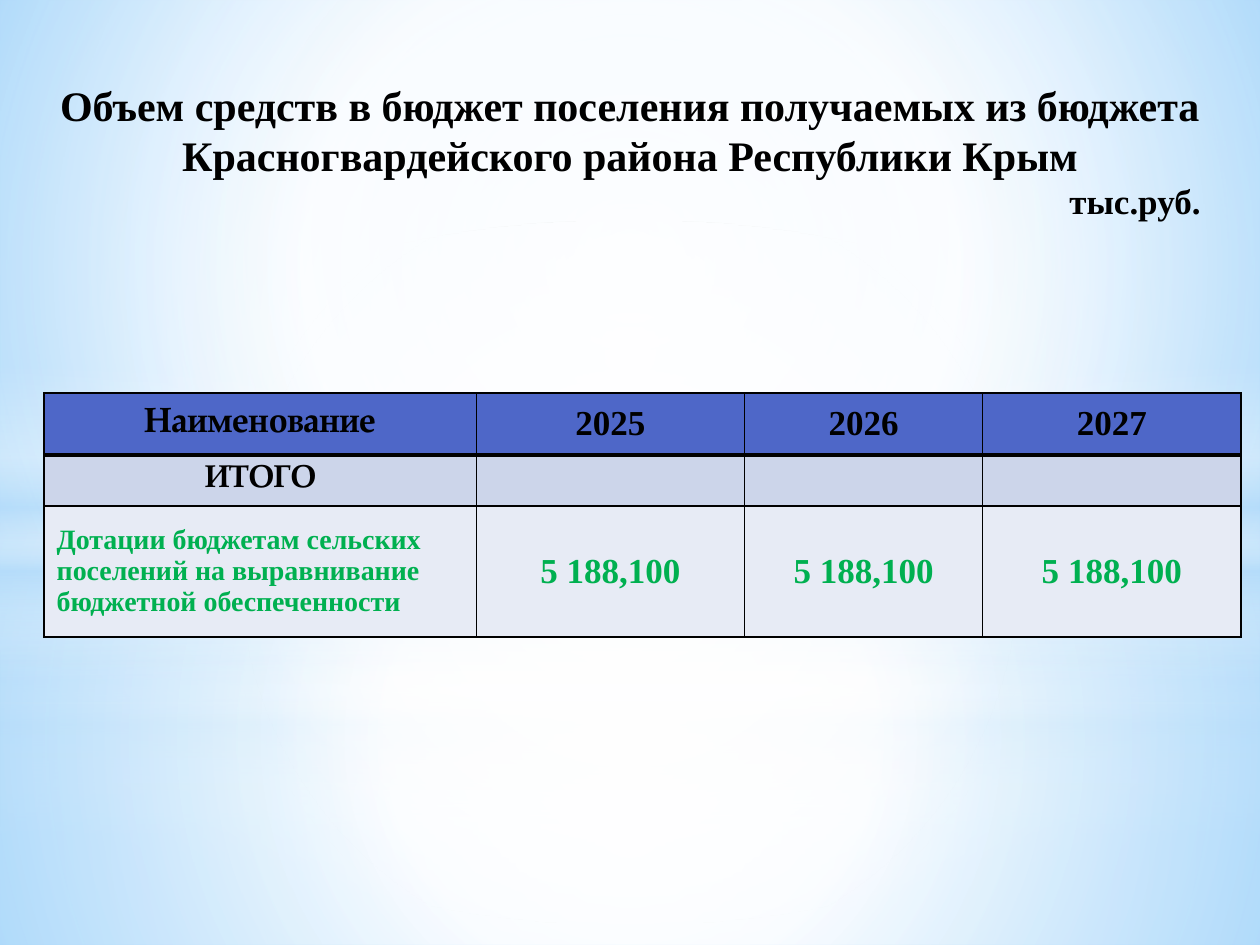
from pptx import Presentation
from pptx.dml.color import RGBColor
from pptx.enum import shapes, text
from pptx.oxml import ns, parse_xml
from pptx.util import Inches, Pt

COLORS = {"black": "000000", "white": "FFFFFF", "haze": "B4DCFA",
          "sky": "9ED5FF", "edge": "5BB9FF", "header": "4E67C8",
          "total": "CCD5EA", "row": "E7EBF5", "green": "00B050"}
SERIF, PAGELLA = "Times New Roman", "TeX Gyre Pagella"
CENTER = (50, 50, 50, 50)


def rgb(name):
    return RGBColor.from_string(COLORS[name])


def set_gradient(fill, parent, stops, focus=None):
    """Radial gradient around focus, or top to bottom without one."""
    fill.solid()
    gs = "".join(
        f'<a:gs pos="{pos * 1000}"><a:srgbClr val="{COLORS[color]}">'
        f'<a:alpha val="{alpha * 1000}"/></a:srgbClr></a:gs>'
        for pos, color, alpha in stops)
    if focus:
        l, t, r, b = (v * 1000 for v in focus)
        kind = (f'<a:path path="circle"><a:fillToRect l="{l}" t="{t}" '
                f'r="{r}" b="{b}"/></a:path>')
    else:
        kind = '<a:lin ang="5400000" scaled="0"/>'
    grad = parse_xml(f'<a:gradFill {ns.nsdecls("a")} rotWithShape="1">'
                     f'<a:gsLst>{gs}</a:gsLst>{kind}</a:gradFill>')
    parent.replace(parent.find(ns.qn("a:solidFill")), grad)


def add_layer(s, kind, top, height, stops, focus=None):
    sp = s.shapes.add_shape(kind, 0, Inches(top), Inches(10), Inches(height))
    sp.shadow.inherit = False
    sp.line.fill.background()
    set_gradient(sp.fill, sp.element.spPr, stops, focus)


def add_glow(s, split, band_top, extra, oval_stop):
    """Lower and upper haze meeting at split, a light band and an oval."""
    rect, oval = shapes.MSO_SHAPE.RECTANGLE, shapes.MSO_SHAPE.OVAL
    add_layer(s, rect, split, 7.5 - split,
              [(0, "white", 91 + extra), (37, "white", 76 + extra),
               (100, "haze", 79 + extra)], CENTER)
    add_layer(s, rect, 0, split,
              [(0, "white", 89 + extra), (48, "white", 62 + extra),
               (100, "haze", 79 + extra)], CENTER)
    add_layer(s, rect, band_top, 2.5,
              [(0, "white", 0), (29, "white", 30), (45, "haze", 40),
               (55, "white", 26), (65, "haze", 60), (100, "white", 0)])
    add_layer(s, oval, 1.75, 5.58,
              [(0, "white", 100), (oval_stop, "white", 0)], CENTER)


def add_background(s):
    fill = s.background.fill
    fill.solid()
    set_gradient(fill, s.element.find(".//" + ns.qn("p:bgPr")),
                 [(0, "sky", 100), (60, "white", 100), (100, "edge", 100)],
                 (20, 10, 20, 60))
    add_glow(s, 5.58, 4.12, 0, 56)
    add_glow(s, 4.23, 2.9, 1, 54)


def format_paragraph(p, size, align, font=SERIF, color="black"):
    p.alignment = align
    p.font.size, p.font.name, p.font.bold = Pt(size), font, True
    p.font.color.rgb = rgb(color)


def place_title(s, left, top, width, height):
    title = s.shapes.title
    title.left, title.top = Inches(left), Inches(top)
    title.width, title.height = Inches(width), Inches(height)
    title.element.getparent().append(title.element)  # in front of the glow
    tf = title.text_frame
    tf.word_wrap, tf.auto_size = True, text.MSO_AUTO_SIZE.NONE
    tf.vertical_anchor = text.MSO_ANCHOR.MIDDLE
    tf.margin_left = tf.margin_right = Inches(0.47)
    tf.text = ("Объем средств в бюджет поселения получаемых из бюджета "
               "Красногвардейского района Республики Крым\nтыс.руб.")
    heading, unit = tf.paragraphs
    format_paragraph(heading, 24, text.PP_ALIGN.CENTER)
    format_paragraph(unit, 20, text.PP_ALIGN.RIGHT)
    for p in tf.paragraphs:
        p.space_before = Pt(0)


def set_borders(cell, top, bottom):
    tc_pr = cell._tc.get_or_add_tcPr()
    for side, width in zip("LRTB", (1, 1, top, bottom)):
        tc_pr.append(parse_xml(
            f'<a:ln{side} {ns.nsdecls("a")} w="{Pt(width)}"><a:solidFill>'
            f'<a:srgbClr val="{COLORS["black"]}"/></a:solidFill></a:ln{side}>'))


def add_budget_table(s, left, top, widths, heights):
    rows = [["Наименование", "2025", "2026", "2027"],
            ["ИТОГО", "", "", ""],
            ["Дотации бюджетам сельских поселений на выравнивание "
             "бюджетной обеспеченности"] + ["5 188,100"] * 3]
    # fill, text colour, label size, label font, top and bottom border
    styles = [("header", "black", 20, PAGELLA, 1, 3),
              ("total", "black", 18, PAGELLA, 3, 1),
              ("row", "green", 16, SERIF, 1, 1)]
    table = s.shapes.add_table(
        len(rows), len(widths), Inches(left), Inches(top),
        Inches(sum(widths)), Inches(sum(heights))).table
    table.first_row = table.horz_banding = False
    for col, width in zip(table.columns, widths):
        col.width = Inches(width)
    for i, (values, style) in enumerate(zip(rows, styles)):
        fill, color, label_size, label_font, above, below = style
        table.rows[i].height = Inches(heights[i])
        for j, value in enumerate(values):
            cell = table.cell(i, j)
            set_borders(cell, above, below)
            cell.fill.solid()
            cell.fill.fore_color.rgb = rgb(fill)
            cell.vertical_anchor = text.MSO_ANCHOR.MIDDLE
            if not value:
                continue
            cell.text = value
            size, font = (20, SERIF) if j else (label_size, label_font)
            align = (text.PP_ALIGN.LEFT if i == 2 and j == 0
                     else text.PP_ALIGN.CENTER)
            format_paragraph(cell.text_frame.paragraphs[0],
                             size, align, font, color)


def main():
    prs = Presentation()
    prs.slide_width, prs.slide_height = Inches(10), Inches(7.5)
    s = prs.slides.add_slide(prs.slide_layouts[5])
    add_background(s)
    add_budget_table(s, 0.35, 3.12, (3.43, 2.13, 1.89, 2.05),
                     (0.49, 0.4, 1.04))
    place_title(s, 0, 0.6, 10, 1.19)
    prs.save("out.pptx")


if __name__ == "__main__":
    main()
